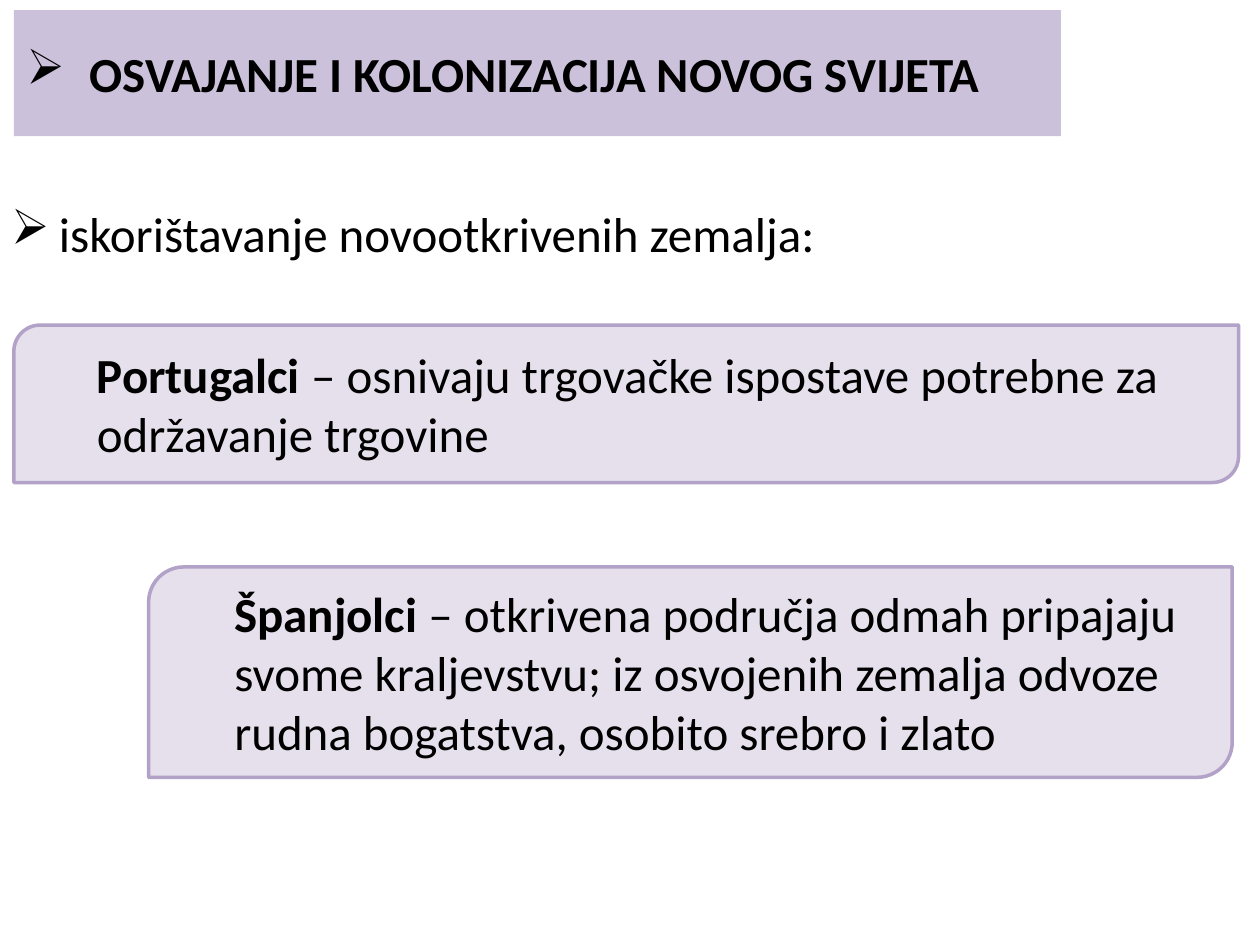
from lxml import etree
from pptx import Presentation
from pptx import util as u
from pptx.dml.color import RGBColor
from pptx.enum import shapes, text
from pptx.oxml.ns import qn

LEFT = 0.11


def color(hex_string):
    return RGBColor.from_string(hex_string)


def format_paragraph(paragraph, indent, hanging=0, bullet=None):
    paragraph.alignment = text.PP_ALIGN.LEFT
    properties = paragraph._p.get_or_add_pPr()
    properties.set("marL", str(u.Inches(indent)))
    properties.set("indent", str(-u.Inches(hanging)))
    if bullet:
        etree.SubElement(properties, qn("a:buChar")).set("char", bullet)
    paragraph.font.name = "Calibri"
    paragraph.font.size = u.Pt(28)
    paragraph.font.color.rgb = color("000000")


presentation = Presentation()
presentation.slide_width = u.Inches(10)
presentation.slide_height = u.Inches(7.5)
slide = presentation.slides.add_slide(presentation.slide_layouts[5])

# Title band
title = slide.shapes.title
title.left, title.top, title.width, title.height = map(u.Inches, (LEFT, 0.08, 8.31, 1))
title.fill.solid()
title.fill.fore_color.rgb = color("CCC1DA")
title.text_frame.text = "OSVAJANJE I KOLONIZACIJA NOVOG SVIJETA"
title.text_frame.vertical_anchor = text.MSO_ANCHOR.MIDDLE
paragraph = title.text_frame.paragraphs[0]
format_paragraph(paragraph, 0.5, 0.5, "➢")
paragraph.font.bold = True

# Introductory line
intro = slide.shapes.add_textbox(*map(u.Inches, (-0.01, 1.33, 9, 0.92)))
intro.text_frame.word_wrap = True
intro.text_frame.text = "iskorištavanje novootkrivenih zemalja:"
paragraph = intro.text_frame.paragraphs[0]
format_paragraph(paragraph, 0.38, 0.38, "➢")
paragraph.line_spacing = 1.5

# One panel for each colonial power: position, name, description
panels = [
    ((LEFT, 2.58, 9.72, 1.25), "Portugalci",
     " – osnivaju trgovačke ispostave potrebne za održavanje trgovine"),
    ((1.18, 4.5, 8.6, 1.67), "Španjolci",
     " – otkrivena područja odmah pripajaju svome kraljevstvu; iz osvojenih "
     "zemalja odvoze rudna bogatstva, osobito srebro i zlato"),
]
for position, name, description in panels:
    panel = slide.shapes.add_shape(
        shapes.MSO_SHAPE.ROUND_2_DIAG_RECTANGLE, *map(u.Inches, position))
    panel.shadow.inherit = False
    panel.fill.solid()
    panel.fill.fore_color.rgb = color("E6E0EC")
    panel.line.color.rgb = color("B3A2C7")
    panel.line.width = u.Pt(2)
    panel.text_frame.word_wrap = True
    panel.text_frame.vertical_anchor = text.MSO_ANCHOR.MIDDLE
    paragraph = panel.text_frame.paragraphs[0]
    paragraph.level = 1
    format_paragraph(paragraph, 0.5)
    for words, bold in ((name, True), (description, False)):
        run = paragraph.add_run()
        run.text = words
        run.font.bold = bold

presentation.save("out.pptx")
